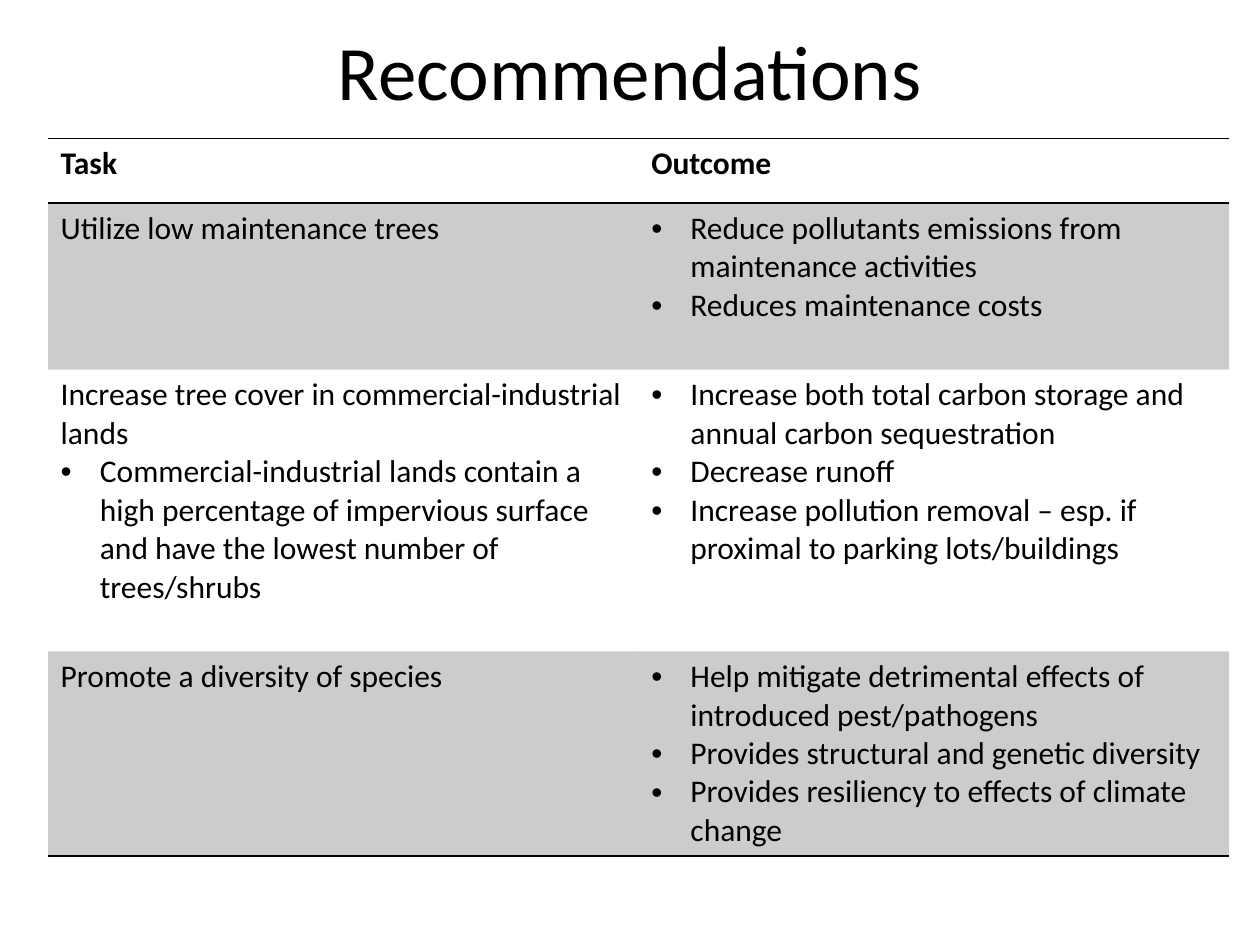
from lxml import etree
from pptx import Presentation
from pptx.dml.color import RGBColor
from pptx.enum.text import MSO_ANCHOR, PP_ALIGN
from pptx.oxml.ns import qn
from pptx.util import Cm, Pt

CENTER = PP_ALIGN.CENTER
LEFT = PP_ALIGN.LEFT
MIDDLE = MSO_ANCHOR.MIDDLE
TITLE_ONLY = 5
NO_STYLE = "{2D5ABB26-0587-4C30-8999-92F81FD0307C}"

THEME = {
    "font": "Calibri",
    "ink": "000000",
    "band_opacity": 20,
    "title_size": 44,
    "body_size": 18,
    "rule_width": 1,
}

TITLE = "Recommendations"
HEADINGS = ("Task", "Outcome")
RECOMMENDATIONS = [
    {
        "task": "Utilize low maintenance trees",
        "reasons": [],
        "outcomes": [
            "Reduce pollutants emissions from maintenance activities",
            "Reduces maintenance costs",
        ],
        "height": 3.36,
    },
    {
        "task": "Increase tree cover in commercial-industrial lands",
        "reasons": [
            "Commercial-industrial lands contain a high percentage of impervious "
            "surface and have the lowest number of trees/shrubs",
        ],
        "outcomes": [
            "Increase both total carbon storage and annual carbon sequestration",
            "Decrease runoff",
            "Increase pollution removal – esp. if proximal to parking lots/buildings",
        ],
        "height": 5.68,
    },
    {
        "task": "Promote a diversity of species",
        "reasons": [],
        "outcomes": [
            "Help mitigate detrimental effects of introduced pest/pathogens",
            "Provides structural and genetic diversity",
            "Provides resiliency to effects of climate change",
        ],
        "height": 4.12,
    },
]
HEADING_HEIGHT = 1.3
TABLE_LEFT, TABLE_TOP, TABLE_WIDTH = 0.97, 2.79, 23.81
BULLET_INDENT = 0.79


def add_run(paragraph, wording, size, bold=False):
    run = paragraph.add_run()
    run.text = wording
    run.font.name = THEME["font"]
    run.font.size = Pt(size)
    run.font.bold = bold
    run.font.color.rgb = RGBColor.from_string(THEME["ink"])


def add_bullet(paragraph):
    properties = paragraph._p.get_or_add_pPr()
    properties.set("marL", str(Cm(BULLET_INDENT)))
    properties.set("indent", str(-Cm(BULLET_INDENT)))
    etree.SubElement(properties, qn("a:buFont"), typeface="Arial")
    etree.SubElement(properties, qn("a:buChar"), char="•")


def fill_cell(cell, plain, bullets, bold=False):
    frame = cell.text_frame
    entries = [(line, False) for line in plain] + [(line, True) for line in bullets]
    for index, (wording, bulleted) in enumerate(entries):
        paragraph = frame.add_paragraph() if index else frame.paragraphs[0]
        paragraph.alignment = LEFT
        if bulleted:
            add_bullet(paragraph)
        add_run(paragraph, wording, THEME["body_size"], bold)


def shade(cell, banded):
    if not banded:
        cell.fill.background()
        return
    cell.fill.solid()
    cell.fill.fore_color.rgb = RGBColor.from_string(THEME["ink"])
    ink = cell._tc.tcPr.find(".//" + qn("a:srgbClr"))
    etree.SubElement(ink, qn("a:alpha"), val=str(THEME["band_opacity"] * 1000))


def add_rules(cell, sides):
    for position, side in enumerate(sides):
        rule = etree.Element(qn("a:ln" + side), w=str(Pt(THEME["rule_width"])))
        ink = etree.SubElement(rule, qn("a:solidFill"))
        etree.SubElement(ink, qn("a:srgbClr"), val=THEME["ink"])
        cell._tc.get_or_add_tcPr().insert(position, rule)


def add_title(slide):
    title = slide.shapes.title
    title.left, title.top, title.width, title.height = Cm(1.27), Cm(0.33), Cm(22.86), Cm(2.16)
    title.text_frame.vertical_anchor = MIDDLE
    heading = title.text_frame.paragraphs[0]
    heading.alignment = CENTER
    add_run(heading, TITLE, THEME["title_size"])


def add_recommendations(slide):
    heights = [HEADING_HEIGHT] + [item["height"] for item in RECOMMENDATIONS]
    table = slide.shapes.add_table(
        len(heights), len(HEADINGS),
        Cm(TABLE_LEFT), Cm(TABLE_TOP), Cm(TABLE_WIDTH), Cm(sum(heights)),
    ).table
    table._tbl.tblPr.find(qn("a:tableStyleId")).text = NO_STYLE
    for row, height in zip(table.rows, heights):
        row.height = Cm(height)

    for column, heading in enumerate(HEADINGS):
        fill_cell(table.cell(0, column), [heading], [], bold=True)
    for row, item in enumerate(RECOMMENDATIONS, start=1):
        fill_cell(table.cell(row, 0), [item["task"]], item["reasons"])
        fill_cell(table.cell(row, 1), [], item["outcomes"])

    rules = {0: "TB", len(RECOMMENDATIONS): "B"}
    for row in range(len(heights)):
        for column in range(len(HEADINGS)):
            cell = table.cell(row, column)
            shade(cell, row % 2 == 1)
            add_rules(cell, rules.get(row, ""))


def main():
    deck = Presentation()
    deck.slide_width, deck.slide_height = Cm(25.4), Cm(19.05)
    slide = deck.slides.add_slide(deck.slide_layouts[TITLE_ONLY])
    add_title(slide)
    add_recommendations(slide)
    deck.save("out.pptx")


if __name__ == "__main__":
    main()
